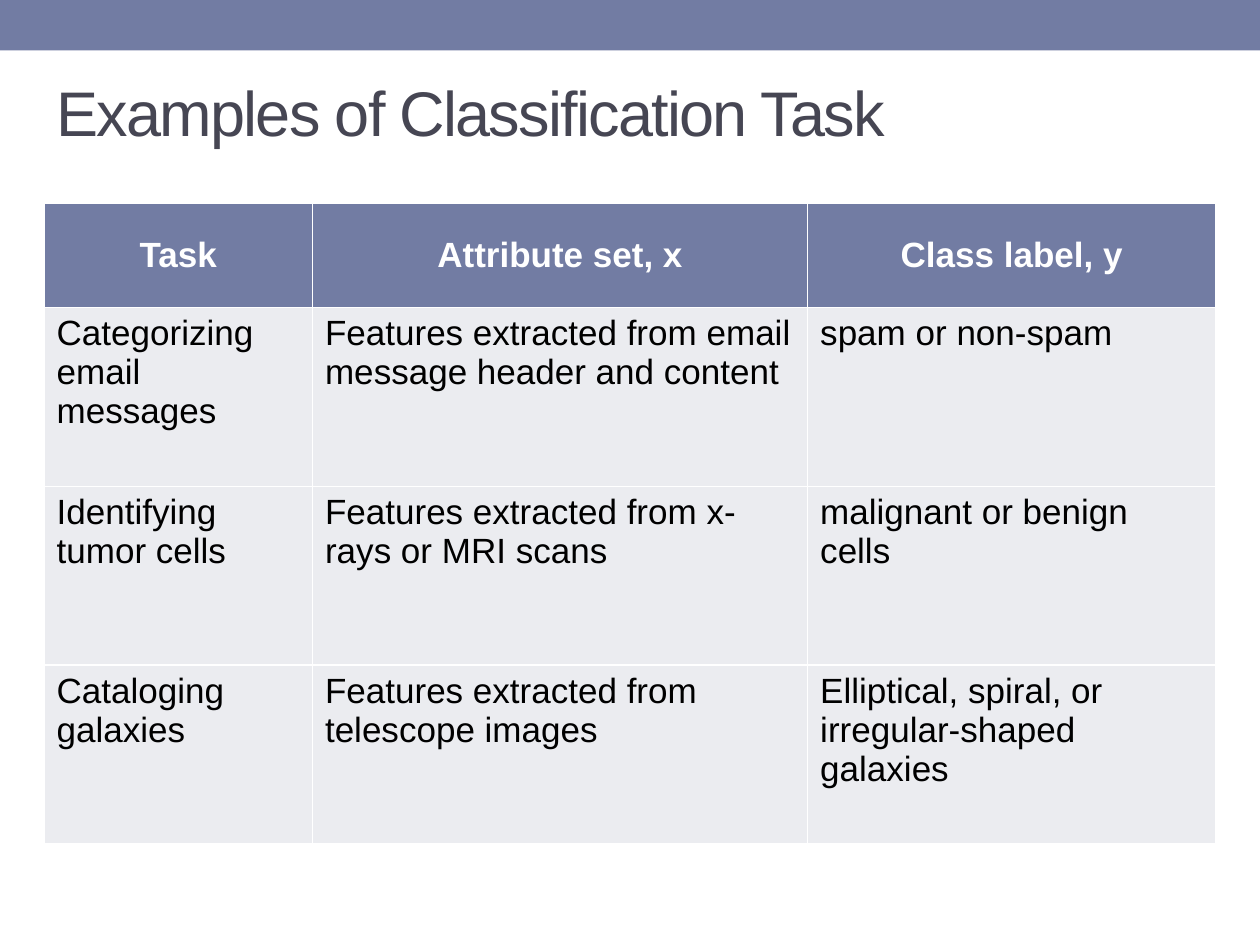
"""Build a slide with a table of classification task examples."""
from dataclasses import astuple, dataclass

from pptx import Presentation, util as u
from pptx.dml.color import RGBColor
from pptx.enum import shapes, text

FONT = "Arial"
SLATE, PALE, INK = "727CA3", "EBECF0", "464653"
WHITE, BLACK = "FFFFFF", "000000"
COLUMN_WIDTHS = (2.13, 3.93, 3.24)
HEADER_HEIGHT, BODY_HEIGHT = 0.83, 1.42


@dataclass(frozen=True)
class Example:
    task: str
    attributes: str
    label: str


HEADINGS = Example("Task", "Attribute set, x", "Class label, y")
EXAMPLES = (
    Example("Categorizing email messages",
            "Features extracted from email message header and content",
            "spam or non-spam"),
    Example("Identifying tumor cells",
            "Features extracted from x-rays or MRI scans",
            "malignant or benign cells"),
    Example("Cataloging galaxies",
            "Features extracted from telescope images",
            "Elliptical, spiral, or irregular-shaped galaxies"),
)


def paint(fill, colour: str) -> None:
    fill.solid()
    fill.fore_color.rgb = RGBColor.from_string(colour)


def style_font(font, size: float, colour: str, bold: bool = False) -> None:
    font.name, font.size, font.bold = FONT, u.Pt(size), bold
    paint(font.fill, colour)


def add_banner(slide) -> None:
    banner = slide.shapes.add_shape(
        shapes.MSO_SHAPE.RECTANGLE, 0, 0, u.Inches(10), u.Inches(0.4))
    banner.shadow.inherit = False
    paint(banner.fill, SLATE)
    banner.line.fill.background()


def add_title(slide, wording: str) -> None:
    frame = slide.shapes.add_textbox(
        u.Inches(0.35), u.Inches(0.59), u.Inches(9.06), u.Inches(0.58)).text_frame
    frame.word_wrap = True
    frame.vertical_anchor = text.MSO_ANCHOR.MIDDLE
    heading = frame.paragraphs[0]
    run = heading.add_run()
    run.text = wording
    style_font(heading.font, 36, INK)
    run._r.get_or_add_rPr().set("spc", "-100")


def fill_cell(cell, wording: str, is_header: bool) -> None:
    cell.text = wording
    paint(cell.fill, SLATE if is_header else PALE)
    paragraph = cell.text_frame.paragraphs[0]
    paragraph.space_before, paragraph.space_after = u.Pt(2), u.Pt(4)
    style_font(paragraph.font, 20, WHITE if is_header else BLACK, is_header)
    if is_header:
        cell.vertical_anchor = text.MSO_ANCHOR.MIDDLE
        paragraph.alignment = text.PP_ALIGN.CENTER


def add_examples(slide, examples: tuple[Example, ...]) -> None:
    rows = (HEADINGS, *examples)
    heights = [HEADER_HEIGHT] + [BODY_HEIGHT] * len(examples)
    table = slide.shapes.add_table(
        len(rows), len(COLUMN_WIDTHS), u.Inches(0.35), u.Inches(1.61),
        u.Inches(sum(COLUMN_WIDTHS)), u.Inches(sum(heights))).table
    table.horz_banding = False
    for column, width in zip(table.columns, COLUMN_WIDTHS):
        column.width = u.Inches(width)
    for index, (row, example, height) in enumerate(zip(table.rows, rows, heights)):
        row.height = u.Inches(height)
        for cell, wording in zip(row.cells, astuple(example)):
            fill_cell(cell, wording, index == 0)


def main() -> None:
    deck = Presentation()
    deck.slide_width, deck.slide_height = u.Inches(10), u.Inches(7.5)
    slide = deck.slides.add_slide(deck.slide_layouts[6])
    paint(slide.background.fill, WHITE)
    add_banner(slide)
    add_title(slide, "Examples of Classification Task")
    add_examples(slide, EXAMPLES)
    deck.save("out.pptx")


if __name__ == "__main__":
    main()
